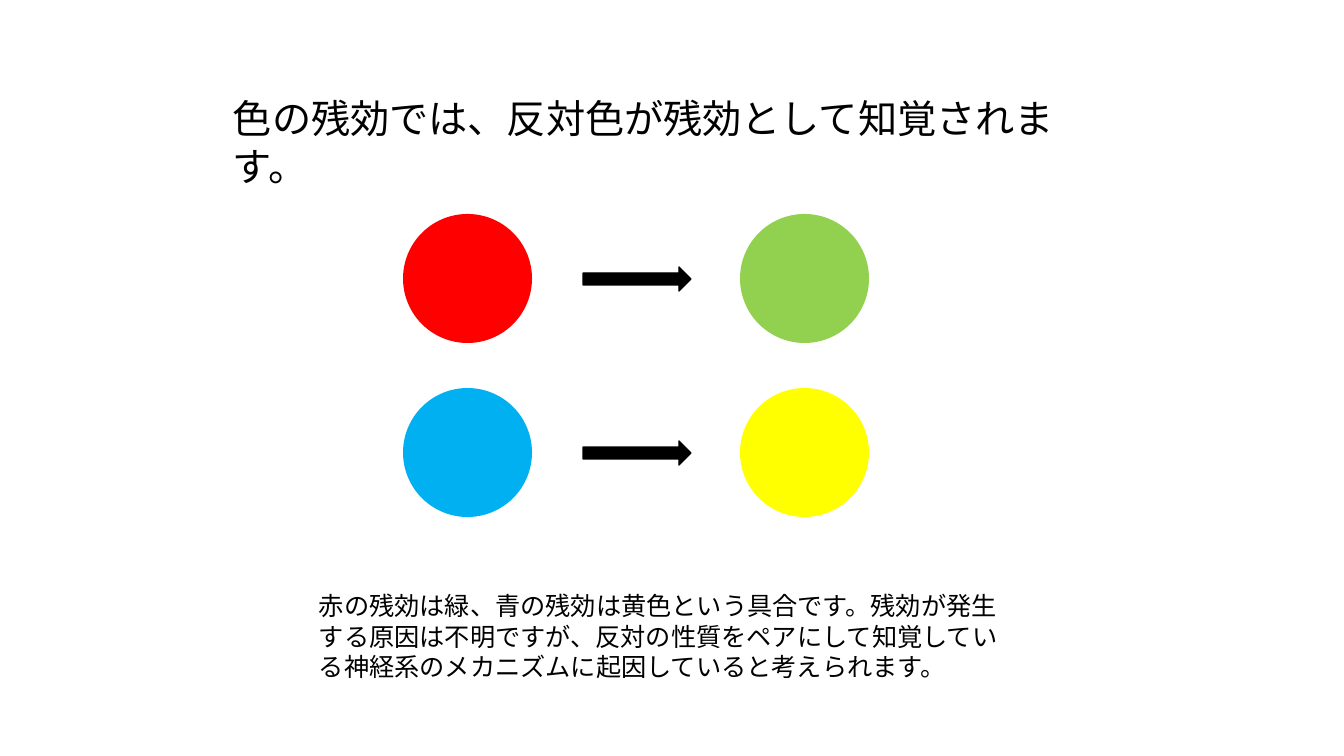
"""Build a slide on the opponent colours seen in colour aftereffects."""
from lxml import etree
from pptx import Presentation
from pptx.dml.color import RGBColor
from pptx.enum.shapes import MSO_SHAPE
from pptx.enum.text import MSO_AUTO_SIZE
from pptx.oxml.ns import qn
from pptx.util import Emu, Pt

CIRCLE = MSO_SHAPE.OVAL
ARROW = MSO_SHAPE.RIGHT_ARROW
FIT_TEXT = MSO_AUTO_SIZE.SHAPE_TO_FIT_TEXT
FONT = "Noto Sans CJK JP"
COLORS = {
    "black": "000000",
    "red": "FF0000",
    "green": "92D050",
    "blue": "00B0F0",
    "yellow": "FFFF00",
}
EMU_PER_PX = 914400 / 100.8


def px(length):
    return Emu(round(length * EMU_PER_PX))


def add_filled(kind, left, top, width, height, color):
    shape = slide.shapes.add_shape(kind, px(left), px(top), px(width), px(height))
    shape.shadow.inherit = False
    shape.fill.solid()
    shape.fill.fore_color.rgb = RGBColor.from_string(COLORS[color])
    shape.line.fill.background()
    return shape


prs = Presentation()
prs.slide_width, prs.slide_height = px(1344), px(756)
slide = prs.slides.add_slide(prs.slide_layouts[6])

statement = "色の残効では、反対色が残効として知覚されます。"
explanation = (
    "赤の残効は緑、青の残効は黄色という具合です。"
    "残効が発生する原因は不明ですが、反対の性質をペアにして知覚している"
    "神経系のメカニズムに起因していると考えられます。"
)
passages = [
    (statement, 223, 89, 844, 57, 28, 34),
    (explanation, 309, 586, 708, 102, 18, 21.5),
]
for wording, left, top, width, height, size, line_height in passages:
    passage = slide.shapes.add_textbox(px(left), px(top), px(width), px(height))
    frame = passage.text_frame
    frame.word_wrap = True
    frame.auto_size = FIT_TEXT
    frame.text = wording
    paragraph = frame.paragraphs[0]
    paragraph.line_spacing = Pt(line_height)
    font = paragraph.runs[0].font
    font.size = Pt(size)
    font.name = FONT
    font.color.rgb = RGBColor.from_string(COLORS["black"])
    properties = paragraph.runs[0]._r.get_or_add_rPr()
    properties.set("lang", "ja-JP")
    etree.SubElement(properties, qn("a:ea")).set("typeface", FONT)

DIAMETER = 129
ROW_PITCH = 174
aftereffects = [("red", "green"), ("blue", "yellow")]
for row, (seen, perceived) in enumerate(aftereffects):
    top = 214 + row * ROW_PITCH
    add_filled(CIRCLE, 403, top, DIAMETER, DIAMETER, seen)
    add_filled(CIRCLE, 740, top, DIAMETER, DIAMETER, perceived)
    arrow = add_filled(ARROW, 583, top + 53, 108, 24, "black")
    arrow.line.color.rgb = RGBColor.from_string(COLORS["black"])
    arrow.line.width = Pt(1)

prs.save("out.pptx")
